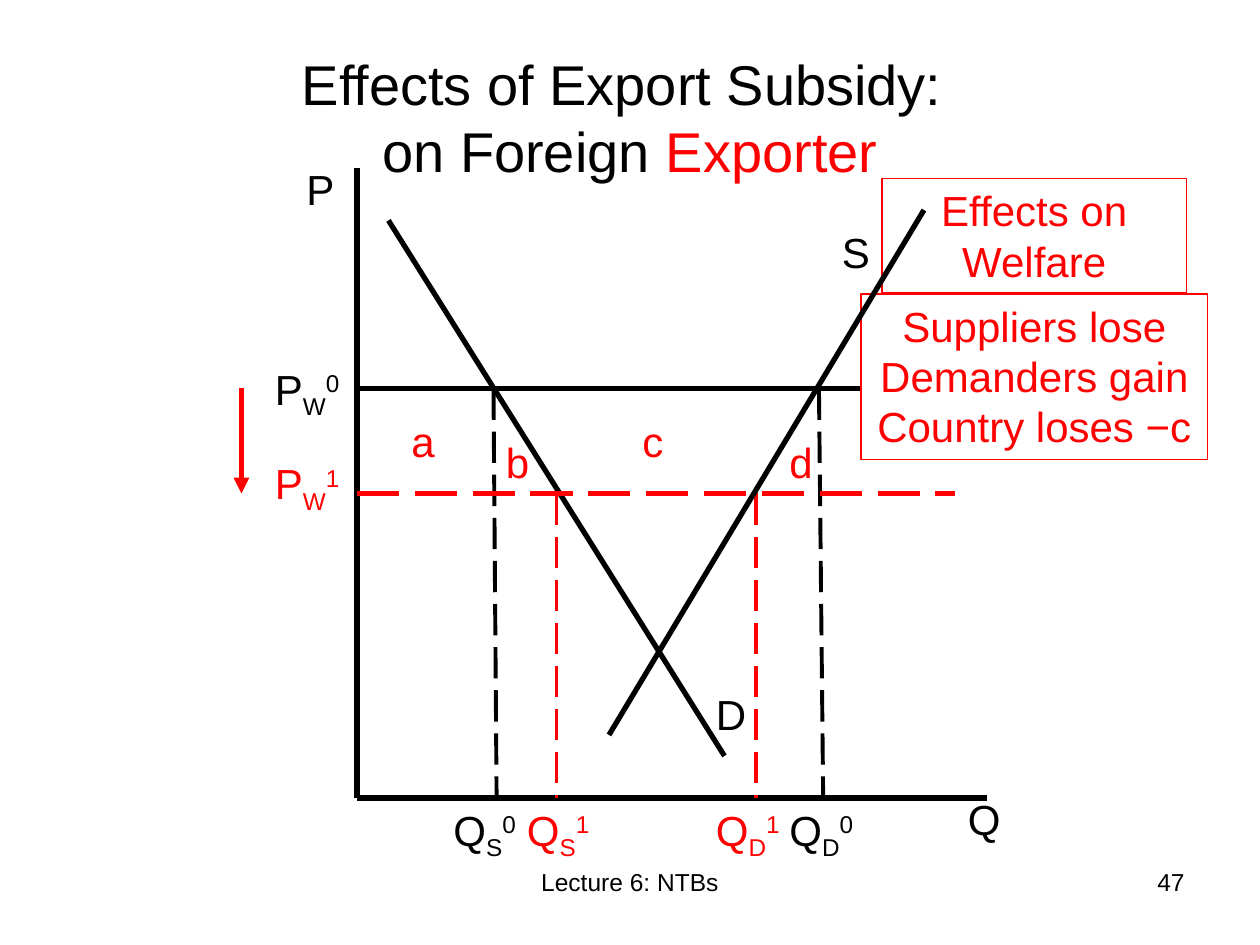
from typing import NamedTuple

from lxml import etree
from pptx import Presentation
from pptx.dml.color import RGBColor
from pptx.enum.dml import MSO_LINE
from pptx.enum.shapes import MSO_CONNECTOR, MSO_SHAPE
from pptx.enum.text import MSO_ANCHOR, MSO_AUTO_SIZE, PP_ALIGN
from pptx.oxml.ns import qn
from pptx.util import Cm, Pt

LEFT, CENTER, RIGHT = PP_ALIGN.LEFT, PP_ALIGN.CENTER, PP_ALIGN.RIGHT
MIDDLE, TOP = MSO_ANCHOR.MIDDLE, MSO_ANCHOR.TOP
FIT_SHAPE, NO_FIT = MSO_AUTO_SIZE.SHAPE_TO_FIT_TEXT, MSO_AUTO_SIZE.NONE
LONG_DASH = MSO_LINE.LONG_DASH
STRAIGHT, RECTANGLE = MSO_CONNECTOR.STRAIGHT, MSO_SHAPE.RECTANGLE

FONT = "Arial"
COLORS = {"before": "000000", "after": "FF0000", "paper": "FFFFFF"}
SUBSCRIPT, SUPERSCRIPT = -25000, 30000
TITLE_ONLY = 5

# Positions are counted in cells of a 120 x 90 grid.
COLUMNS, ROWS = 120, 90
CELL_CM = 25.4 / COLUMNS
AXIS_X, AXIS_Y = 34, 76
PRICE_BEFORE, PRICE_AFTER = 37, 47
PRICE_END = 91


class Span(NamedTuple):
    text: str
    color: str = "before"
    baseline: int = 0


class Line(NamedTuple):
    start: tuple[float, float]
    end: tuple[float, float]
    color: str = "before"
    width: float = 3
    dashed: bool = False
    arrow: bool = False


class Label(NamedTuple):
    x: float
    y: float
    text: str
    color: str = "before"
    sub: str = ""
    sup: str = ""
    width: float = 7


class Box(NamedTuple):
    x: float
    y: float
    width: float
    height: float
    text: str
    filled: bool


def cells(*counts: float) -> list[Cm]:
    return [Cm(count * CELL_CM) for count in counts]


def rgb(name: str) -> RGBColor:
    return RGBColor.from_string(COLORS[name])


def write_text(frame, spans, *, size=24, align=LEFT, anchor=TOP, fit=FIT_SHAPE):
    frame.word_wrap = True
    frame.auto_size = fit
    frame.vertical_anchor = anchor
    paragraph = frame.paragraphs[0]
    paragraph.alignment = align
    for span in spans:
        for number, part in enumerate(span.text.split("\n")):
            if number:
                paragraph.add_line_break()
            run = paragraph.add_run()
            run.text = part
            run.font.name = FONT
            run.font.size = Pt(size)
            run.font.color.rgb = rgb(span.color)
            if span.baseline:
                run.font._element.set("baseline", str(span.baseline))


def draw_line(slide, line: Line) -> None:
    connector = slide.shapes.add_connector(STRAIGHT, *cells(*line.start, *line.end))
    connector.line.color.rgb = rgb(line.color)
    connector.line.width = Pt(line.width)
    if line.dashed:
        connector.line.dash_style = LONG_DASH
    if line.arrow:
        outline = connector.line._get_or_add_ln()
        etree.SubElement(outline, qn("a:tailEnd"), type="triangle")
    etree.SubElement(connector._element.spPr, qn("a:effectLst"))


def draw_label(slide, label: Label) -> None:
    textbox = slide.shapes.add_textbox(*cells(label.x, label.y, label.width, 6))
    spans = [Span(label.text, label.color)]
    if label.sub:
        spans += [Span(label.sub, label.color, SUBSCRIPT),
                  Span(label.sup, label.color, SUPERSCRIPT)]
    write_text(textbox.text_frame, spans)


def draw_box(slide, box: Box) -> None:
    shape = slide.shapes.add_shape(
        RECTANGLE, *cells(box.x, box.y, box.width, box.height))
    shape.shadow.inherit = False
    if box.filled:
        shape.fill.solid()
        shape.fill.fore_color.rgb = rgb("paper")
    else:
        shape.fill.background()
    shape.line.color.rgb = rgb("after")
    shape.line.width = Pt(0.75)
    write_text(shape.text_frame, [Span(box.text, "after")], align=CENTER)


def draw_footer(slide, x: float, width: float, text: str, align) -> None:
    footer = slide.shapes.add_textbox(*cells(x, 82, width, 6.25))
    write_text(footer.text_frame, [Span(text)], size=14, align=align, fit=NO_FIT)


def drop(x: float, price: float, color: str, foot: float) -> Line:
    """Dashed line from a price level down to the quantity axis."""
    return Line((x, price), (foot, AXIS_Y), color, 2.25, dashed=True)


LINES = [
    Line((AXIS_X, 16), (AXIS_X, AXIS_Y)),
    Line((AXIS_X, AXIS_Y), (94, AXIS_Y)),
    Line((37, 21), (69, 72)),
    Line((AXIS_X, PRICE_BEFORE), (PRICE_END, PRICE_BEFORE)),
    drop(47, PRICE_BEFORE, "before", 47.3),
    drop(78, PRICE_BEFORE, "before", 78.4),
    Line((AXIS_X, PRICE_AFTER), (PRICE_END, PRICE_AFTER), "after", dashed=True),
    drop(53, PRICE_AFTER, "after", 53),
    drop(72, PRICE_AFTER, "after", 72),
]
FRONT_LINES = [
    Line((88, 20), (58, 70)),
    Line((23, PRICE_BEFORE), (23, PRICE_AFTER), "after", arrow=True),
]
LABELS = [
    Label(79, 21, "S"),
    Label(67, 65, "D"),
    Label(28, 15, "P", width=8),
    Label(91, 75, "Q"),
    Label(25, 34, "P", "before", "W", "0", 13),
    Label(25, 43, "P", "after", "W", "1", 10),
    Label(42, AXIS_Y, "Q", "before", "S", "0", 10),
    Label(49, AXIS_Y, "Q", "after", "S", "1", 10),
    Label(67, AXIS_Y, "Q", "after", "D", "1", 10),
    Label(74, AXIS_Y, "Q", "before", "D", "0", 10),
    Label(38, 39, "a", "after"),
    Label(47, 41, "b", "after"),
    Label(60, 39, "c", "after"),
    Label(74, 41, "d", "after"),
]
BOXES = [
    Box(84, 17, 29, 10.9, "Effects on Welfare", False),
    Box(82, 28, 33, 15.75, "Suppliers lose Demanders gain Country loses −c", True),
]


def main() -> None:
    deck = Presentation()
    deck.slide_width, deck.slide_height = cells(COLUMNS, ROWS)
    slide = deck.slides.add_slide(deck.slide_layouts[TITLE_ONLY])

    title = slide.shapes.title
    title.left, title.top, title.width, title.height = cells(6, 3.6, 108, 15)
    heading = [Span("Effects of Export Subsidy: \non Foreign "), Span("Exporter", "after")]
    write_text(title.text_frame, heading, size=32, align=CENTER, anchor=MIDDLE, fit=NO_FIT)
    draw_footer(slide, 41, 38, "Lecture 6: NTBs", CENTER)
    draw_footer(slide, 86, 28, "47", RIGHT)

    for line in LINES:
        draw_line(slide, line)
    for label in LABELS:
        draw_label(slide, label)
    for box in BOXES:
        draw_box(slide, box)
    for line in FRONT_LINES:
        draw_line(slide, line)
    deck.save("out.pptx")


if __name__ == "__main__":
    main()
